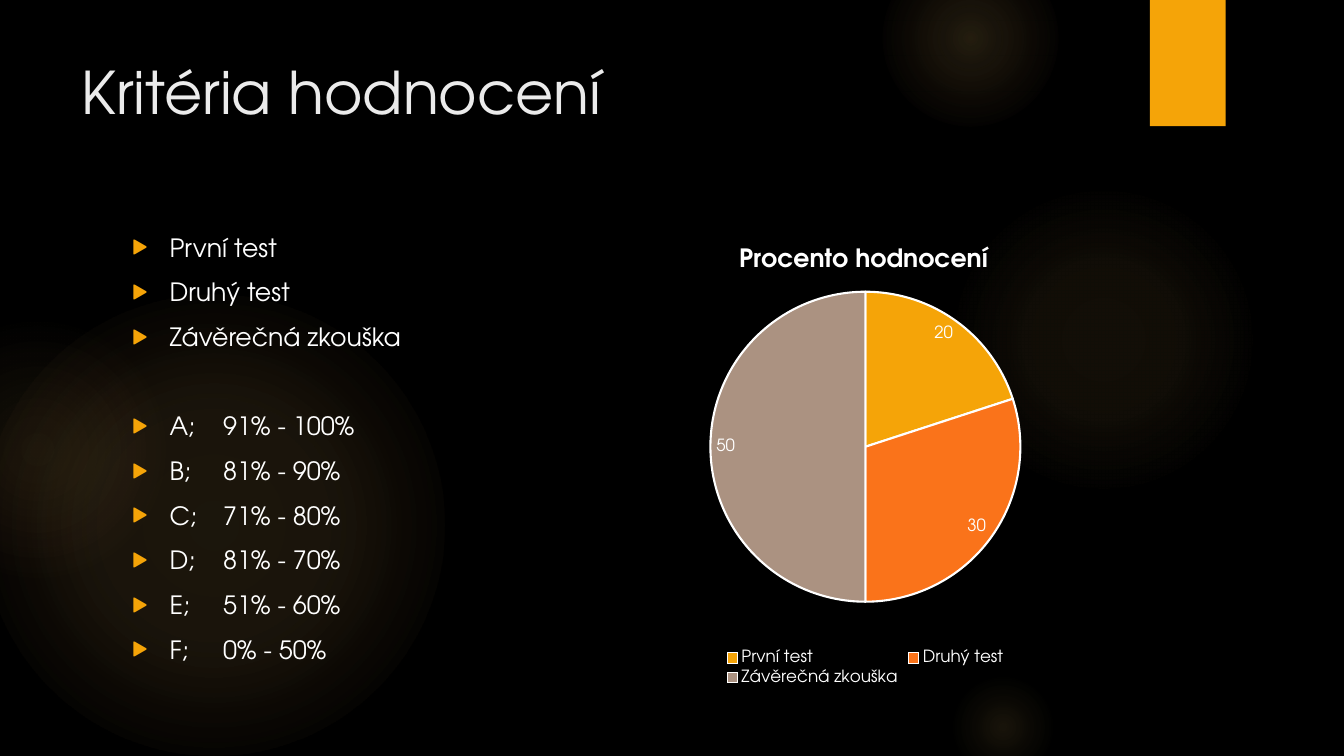
import pptx
import pptx.chart.data
import pptx.dml.color
import pptx.enum.chart
import pptx.enum.shapes
import pptx.enum.text
import pptx.oxml
import pptx.oxml.ns
import pptx.util

Cm, Pt = pptx.util.Cm, pptx.util.Pt
SHAPE = pptx.enum.shapes.MSO_SHAPE
NS = ('xmlns:a="http://schemas.openxmlformats.org/drawingml/2006/main" '
      'xmlns:c="http://schemas.openxmlformats.org/drawingml/2006/chart"')

PALE = "FAC96A"
# left, top, diameter (cm), then stops: position %, colour, opacity %
GLOWS = [
    (-0.43, 7.42, 11.63, [(0, PALE, 11), (36, PALE, 10), (75, PALE, 0)]),
    (-2.34, 8.05, 6.55, [(0, PALE, 8), (36, PALE, 5), (71, "F59B74", 0)]),
    (23.9, 4.65, 7.82, [(0, PALE, 7), (36, PALE, 6), (69, PALE, 0)]),
    (22.23, -1.27, 4.45, [(0, PALE, 14), (36, PALE, 7), (73, PALE, 0)]),
    (23.9, 16.94, 2.74, [(0, PALE, 10), (31, PALE, 5), (66, PALE, 0)]),
]
TESTS = ["První test", "Druhý test", "Závěrečná zkouška"]
SHARES = [20, 30, 50]
GRADES = ["A;\t91% - 100%", "B;\t81% - 90%", "C;\t71% - 80%",
          "D;\t81% - 70%", "E;\t51% - 60%", "F;\t0% - 50%"]


def color(code):
    return pptx.dml.color.RGBColor.from_string(code)


def xml(text):
    """Parse a fragment whose root tag ends in the NS mark."""
    return pptx.oxml.parse_xml(text.replace("NS", NS, 1))


def layout(x, y, w=None, h=None):
    """Manual chart layout, in fractions of the chart area."""
    tags = [("xMode", "edge"), ("yMode", "edge"), ("x", x), ("y", y)]
    if w is not None:
        tags = [("layoutTarget", "inner")] + tags + [("w", w), ("h", h)]
    body = "".join(f'<c:{tag} val="{val}"/>' for tag, val in tags)
    return xml(f"<c:layout NS><c:manualLayout>{body}</c:manualLayout></c:layout>")


def place(node, new, spot):
    """Put a layout in the node, in place of the one it may have."""
    for old in node.findall(pptx.oxml.ns.qn("c:layout")):
        node.remove(old)
    node.insert(spot, new)


class Deck:
    face = "TeX Gyre Adventor"
    white, amber = "FFFFFF", "F5A408"
    slices = [amber, "FA731A", "AB9281"]

    def __init__(self):
        self.show = pptx.Presentation()
        self.show.slide_width, self.show.slide_height = Cm(33.87), Cm(19.05)
        self.slide = self.show.slides.add_slide(self.show.slide_layouts[1])
        fill = self.slide.background.fill
        fill.solid()
        fill.fore_color.rgb = color("000000")

    def style(self, font, size, tint=white):
        font.name, font.size, font.color.rgb = self.face, Pt(size), color(tint)

    def text(self, par, words, size=18, tint=white, before=0, after=0):
        run = par.add_run()
        run.text = words
        self.style(run.font, size, tint)
        par.alignment = pptx.enum.text.PP_ALIGN.LEFT
        par.space_before, par.space_after = Pt(before), Pt(after)

    def shape(self, kind, *box):
        item = self.slide.shapes.add_shape(kind, *map(Cm, box))
        item.shadow.inherit = False
        item.line.fill.background()
        return item

    def glow(self, left, top, size, stops):
        item = self.shape(SHAPE.OVAL, left, top, size, size)
        marks = "".join(
            f'<a:gs pos="{pos * 1000}"><a:srgbClr val="{tint}">'
            f'<a:alpha val="{part * 1000}"/></a:srgbClr></a:gs>'
            for pos, tint, part in stops)
        grad = xml(f'<a:gradFill NS><a:gsLst>{marks}</a:gsLst><a:path path="circle">'
                   '<a:fillToRect l="50000" t="50000" r="50000" b="50000"/>'
                   '</a:path></a:gradFill>')
        item.element.spPr.find(pptx.oxml.ns.qn("a:prstGeom")).addnext(grad)

    def flag(self, *box):
        item = self.shape(SHAPE.RECTANGLE, *box)
        item.fill.solid()
        item.fill.fore_color.rgb = color(self.amber)

    def holder(self, index, left, top, width, height):
        """Move a placeholder to the front and return its text frame."""
        item = self.slide.placeholders[index]
        item.left, item.top = Cm(left), Cm(top)
        item.width, item.height = Cm(width), Cm(height)
        tree = item.element.getparent()
        tree.append(item.element)
        frame = item.text_frame
        frame.word_wrap = True
        frame.auto_size = pptx.enum.text.MSO_AUTO_SIZE.NONE
        frame.vertical_anchor = pptx.enum.text.MSO_ANCHOR.TOP
        return frame

    def title(self, words, *box):
        frame = self.holder(0, *box)
        self.text(frame.paragraphs[0], words, size=42, tint="EBEBEB")

    def list(self, groups, *box):
        frame = self.holder(1, *box)
        par = frame.paragraphs[0]
        for group in groups:
            for row, words in enumerate(group):
                if par is None:
                    par = frame.add_paragraph()
                gap = 36.2 if row == 0 and group is not groups[0] else 4.3
                self.text(par, words, before=gap, after=6)
                self.bullet(par)
                par = None

    def bullet(self, par):
        prop = par._p.get_or_add_pPr()
        prop.set("marL", str(Cm(0.95)))
        prop.set("indent", str(Cm(-0.95)))
        for part in (f'<a:buClr NS><a:srgbClr val="{self.amber}"/></a:buClr>',
                     '<a:buSzPct NS val="80000"/>',
                     f'<a:buFont NS typeface="{self.face}"/>',
                     '<a:buChar NS char="▶"/>',
                     f'<a:tabLst NS><a:tab pos="{Cm(2.3)}" algn="l"/></a:tabLst>'):
            prop.append(xml(part))

    def pie(self, head, names, values, *box):
        data = pptx.chart.data.CategoryChartData()
        data.categories = names
        data.add_series("Series 1", values)
        kinds = pptx.enum.chart
        chart = self.slide.shapes.add_chart(
            kinds.XL_CHART_TYPE.PIE, *map(Cm, box), data).chart
        self.style(chart.font, 10)

        chart.has_title = True
        name = chart.chart_title
        self.text(name.text_frame.paragraphs[0], head)
        place(name._element, layout(0.23, 0.03), 1)
        place(chart._chartSpace.chart.plotArea, layout(0.18, 0.14, 0.64, 0.67), 0)

        chart.has_legend = True
        chart.legend.position = kinds.XL_LEGEND_POSITION.BOTTOM
        chart.legend.include_in_layout = False
        self.style(chart.legend.font, 12)

        plot = chart.plots[0]
        plot.vary_by_categories = True
        for spot, tint in enumerate(self.slices):
            part = plot.series[0].points[spot].format
            part.fill.solid()
            part.fill.fore_color.rgb = color(tint)
            part.line.color.rgb = color(self.white)
            part.line.width = Pt(1.5)
        labels = plot.series[0].data_labels
        labels.show_value = True
        labels.position = kinds.XL_LABEL_POSITION.INSIDE_END
        self.style(labels.font, 12)


def main():
    deck = Deck()
    for glow in GLOWS:
        deck.glow(*glow)
    deck.flag(28.98, 0, 1.91, 3.18)
    deck.title("Kritéria hodnocení", 1.8, 1.27, 26.14, 3.89)
    deck.list([TESTS, GRADES], 3.07, 5.72, 12.22, 11.66)
    deck.pie("Procento hodnocení", TESTS, SHARES, 15.7, 5.72, 12.22, 11.66)
    deck.show.save("out.pptx")


if __name__ == "__main__":
    main()
